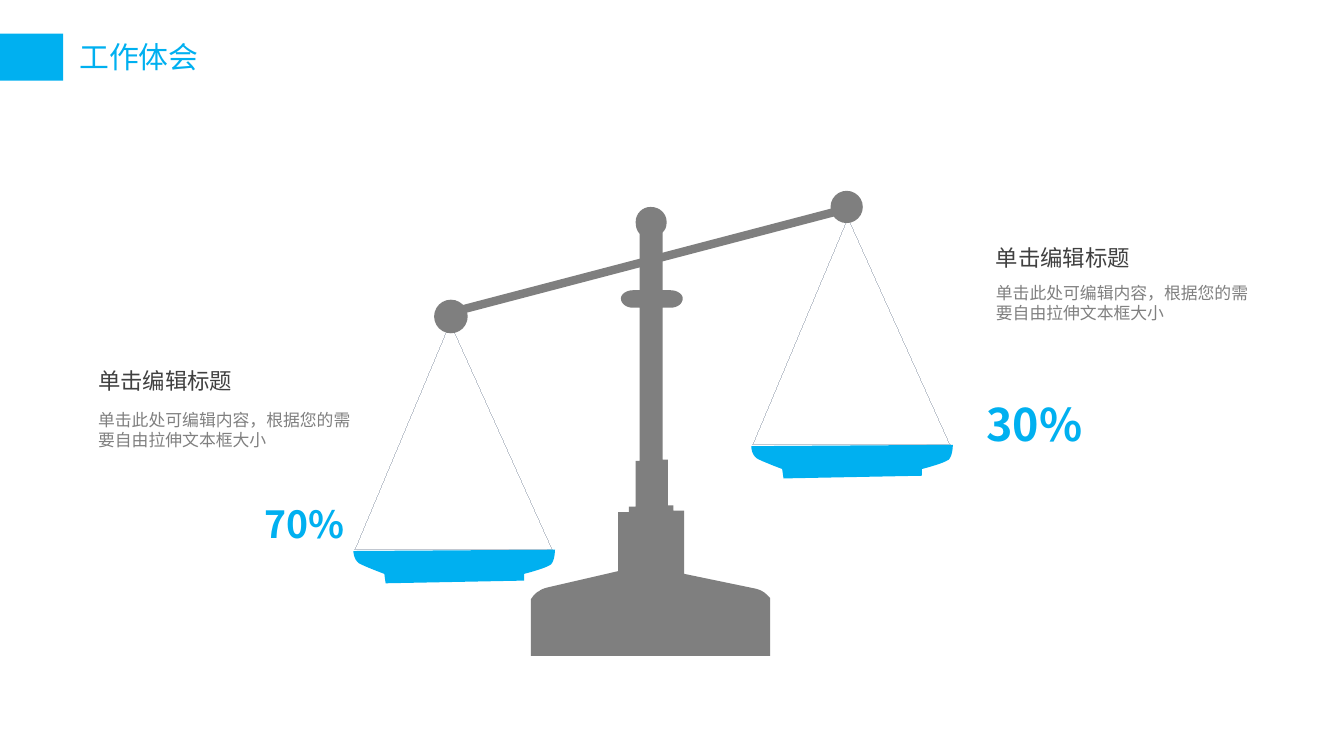
from lxml import etree
from pptx import Presentation
from pptx.dml.color import RGBColor
from pptx.enum.shapes import MSO_CONNECTOR, MSO_SHAPE
from pptx.oxml.ns import qn
from pptx.util import Inches, Pt

RECTANGLE = MSO_SHAPE.RECTANGLE
CIRCLE = MSO_SHAPE.OVAL
STRAIGHT = MSO_CONNECTOR.STRAIGHT
BLUE = RGBColor(0x00, 0xB0, 0xF0)
GRAY = RGBColor(0x7F, 0x7F, 0x7F)
THREAD = RGBColor(0xC1, 0xC7, 0xD0)
HEADING = RGBColor(0x40, 0x40, 0x40)
BODY = RGBColor(0x80, 0x80, 0x80)
HAIRLINE = Pt(0.01)
CURVE_STEPS = 8

STRINGS = [(3.35, 2.4), (2.64, 4.09), (4.11, 4.09)]
PAN = [(2.63, 4.1), (2.63, 4.1, 2.63, 4.16, 2.67, 4.19),
       (2.7, 4.21, 2.86, 4.27, 2.86, 4.27), (2.87, 4.34), (3.9, 4.32),
       (3.9, 4.27), (3.9, 4.27, 4.06, 4.23, 4.1, 4.2),
       (4.13, 4.17, 4.13, 4.09, 4.13, 4.09)]
STAND = [(5.7, 4.42), (5.67, 4.39, 5.62, 4.38, 5.62, 4.38), (5.09, 4.27),
         (5.09, 3.8), (5.01, 3.8), (5.01, 3.76), (4.97, 3.76), (4.97, 3.42),
         (4.93, 3.42), (4.93, 2.29), (4.99, 2.29),
         (5.04, 2.29, 5.08, 2.26, 5.08, 2.22),
         (5.08, 2.19, 5.04, 2.16, 4.99, 2.16), (4.93, 2.16), (4.93, 1.73),
         (4.95, 1.71, 4.96, 1.69, 4.96, 1.65),
         (4.96, 1.59, 4.91, 1.54, 4.84, 1.54),
         (4.78, 1.54, 4.73, 1.59, 4.73, 1.65),
         (4.73, 1.69, 4.74, 1.72, 4.76, 1.74), (4.76, 2.16), (4.71, 2.16),
         (4.66, 2.16, 4.62, 2.19, 4.62, 2.22),
         (4.62, 2.26, 4.66, 2.29, 4.71, 2.29), (4.76, 2.29), (4.76, 3.43),
         (4.73, 3.43), (4.73, 3.77), (4.68, 3.77), (4.68, 3.81), (4.6, 3.81),
         (4.6, 4.25), (4.08, 4.37), (4.08, 4.37, 4.03, 4.38, 4.01, 4.4),
         (3.98, 4.41, 3.95, 4.46, 3.95, 4.46), (3.95, 4.88), (5.73, 4.88),
         (5.73, 4.45)]


def trace(segments):
    """Turn corner points and cubic curves into a list of points."""
    points = []
    for segment in segments:
        if len(segment) == 2:
            points.append(segment)
            continue
        controls = [points[-1], segment[:2], segment[2:4], segment[4:]]
        for step in range(1, CURVE_STEPS + 1):
            t = step / CURVE_STEPS
            weights = ((1 - t) ** 3, 3 * t * (1 - t) ** 2,
                       3 * t * t * (1 - t), t ** 3)
            points.append(tuple(sum(w * c[axis] for w, c in zip(weights, controls))
                                for axis in (0, 1)))
    return points


class ScaleSlide:
    """Holds the slide and draws its elements in one style."""

    def __init__(self, slide, font="Noto Sans CJK SC"):
        self.shapes = slide.shapes
        self.font = font

    def paint(self, shape, fill, line=None):
        shape.shadow.inherit = False
        if fill is None:
            shape.fill.background()
        else:
            shape.fill.solid()
            shape.fill.fore_color.rgb = fill
        if line is None:
            shape.line.fill.background()
        else:
            shape.line.color.rgb = line
            shape.line.width = HAIRLINE

    def solid(self, kind, left, top, width, height, fill):
        shape = self.shapes.add_shape(
            kind, Inches(left), Inches(top), Inches(width), Inches(height))
        self.paint(shape, fill)

    def outline(self, segments, fill=None, line=None, shift=(0, 0)):
        points = [(Inches(x + shift[0]), Inches(y + shift[1]))
                  for x, y in trace(segments)]
        builder = self.shapes.build_freeform(*points[0])
        builder.add_line_segments(points[1:], close=True)
        self.paint(builder.convert_to_shape(), fill, line)

    def beam(self, start, end, color, width):
        bar = self.shapes.add_connector(
            STRAIGHT, *(Inches(value) for value in start + end))
        bar.line.color.rgb = color
        bar.line.width = Pt(width)
        etree.SubElement(bar._element.spPr, qn("a:effectLst"))

    def text(self, words, left, top, width, height, size, color,
             bold=False, wrap=True, insets=(0, 0)):
        box = self.shapes.add_textbox(
            Inches(left), Inches(top), Inches(width), Inches(height))
        frame = box.text_frame
        frame.word_wrap = wrap
        frame.margin_left = frame.margin_right = Inches(insets[0])
        frame.margin_top = frame.margin_bottom = Inches(insets[1])
        run = frame.paragraphs[0].add_run()
        run.text = words
        run.font.size = Pt(size)
        run.font.bold = bold
        run.font.color.rgb = color
        run.font.name = self.font
        east_asian = etree.SubElement(run.font._element, qn("a:ea"))
        east_asian.set("typeface", self.font)

    def caption(self, left, heading_top, body_top):
        self.text("单击编辑标题", left, heading_top, 1.6, 0.2, 12, HEADING)
        self.text("单击此处可编辑内容，根据您的需要自由拉伸文本框大小",
                  left, body_top, 1.91, 0.3, 9, BODY)

    def percent(self, words, left, top, width, height, size):
        self.text(words, left, top, width, height, size, BLUE,
                  bold=True, wrap=False, insets=(0.1, 0.05))


def main():
    """Build the balance slide and save it."""
    deck = Presentation()
    deck.slide_width = Inches(10)
    deck.slide_height = Inches(10 * 9 / 16)
    page = ScaleSlide(deck.slides.add_slide(deck.slide_layouts[6]))

    page.text("工作体会", 0.51, 0.25, 2.01, 0.35, 16, BLUE, insets=(0.08, 0.04))
    page.solid(RECTANGLE, 0, 0.25, 0.47, 0.35, BLUE)

    for shift in ((2.96, -0.78), (0, 0)):
        page.outline(STRINGS, line=THREAD, shift=shift)
        page.outline(PAN, fill=BLUE, shift=shift)

    page.beam((3.26, 2.35), (6.2, 1.58), GRAY, 4.5)
    page.solid(CIRCLE, 6.18, 1.42, 0.24, 0.24, GRAY)
    page.solid(CIRCLE, 3.23, 2.23, 0.25, 0.25, GRAY)
    page.outline(STAND, fill=GRAY)

    page.percent("70%", 1.87, 3.68, 0.81, 0.44, 20)
    page.caption(0.73, 2.73, 3.05)
    page.percent("30%", 7.24, 2.9, 0.93, 0.5, 24)
    page.caption(7.41, 1.82, 2.1)

    deck.save("out.pptx")


if __name__ == "__main__":
    main()
